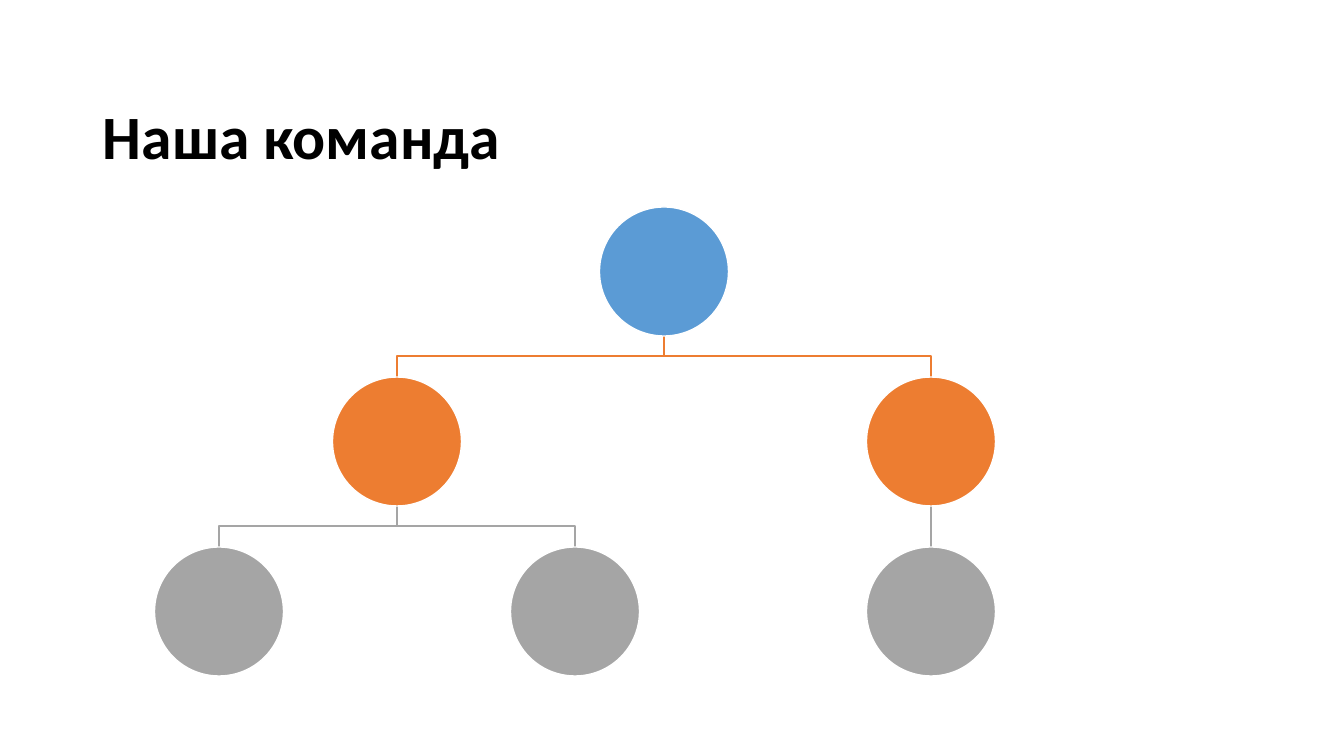
from lxml import etree
from pptx import Presentation
from pptx import util as u
from pptx.dml.color import RGBColor
from pptx.enum import shapes, text
from pptx.oxml.ns import qn

SCALE = u.Inches(1) / 100.8
COLOURS = {
    "title": "000000",
    "outline": "FFFFFF",
    "leader": "5B9BD5",
    "manager": "ED7D31",
    "member": "A5A5A5",
}
DIAMETER = 129
FIRST_TOP = 207
ROW_STEP = 170
LEVELS = ["leader", "manager", "member"]
TEAM = (664, [(397, [(219, []), (575, [])]), (931, [(931, [])])])


def px(length):
    return u.Emu(round(length * SCALE))


def colour(name):
    return RGBColor.from_string(COLOURS[name])


def apply(target, values):
    for name, value in values.items():
        setattr(target, name, value)


def style_line(line, name):
    line.color.rgb = colour(name)
    line.width = u.Pt(1)


def add_title(page, words):
    box = page.shapes.add_textbox(px(93), px(92), px(1159), px(95))
    frame = box.text_frame
    apply(frame, {"word_wrap": True, "vertical_anchor": text.MSO_ANCHOR.MIDDLE})
    para = frame.paragraphs[0]
    para.line_spacing = 0.9
    span = para.add_run()
    span.text = words
    apply(span.font, {"name": "Calibri", "size": u.Pt(44), "bold": True})
    span.font.color.rgb = colour("title")


def add_branch(page, parent_x, child_x, level):
    end = FIRST_TOP + level * ROW_STEP
    start = end - ROW_STEP + DIAMETER
    if parent_x == child_x:
        branch = page.shapes.add_connector(
            shapes.MSO_CONNECTOR.STRAIGHT,
            px(parent_x), px(start), px(child_x), px(end))
        etree.SubElement(branch._element.spPr, qn("a:effectLst"))
    else:
        middle = (start + end) / 2
        builder = page.shapes.build_freeform(parent_x, start, scale=SCALE)
        builder.add_line_segments(
            [(parent_x, middle), (child_x, middle), (child_x, end)], close=False)
        branch = builder.convert_to_shape()
        branch.fill.background()
        branch.shadow.inherit = False
    style_line(branch.line, LEVELS[level])


def add_person(page, centre, level):
    circle = page.shapes.add_shape(
        shapes.MSO_SHAPE.OVAL, px(centre - DIAMETER / 2),
        px(FIRST_TOP + level * ROW_STEP), px(DIAMETER), px(DIAMETER))
    circle.fill.solid()
    circle.fill.fore_color.rgb = colour(LEVELS[level])
    circle.shadow.inherit = False
    style_line(circle.line, "outline")


def add_team(page, member, level=0):
    centre, reports = member
    for report in reports:
        add_branch(page, centre, report[0], level + 1)
    add_person(page, centre, level)
    for report in reports:
        add_team(page, report, level + 1)


def main():
    deck = Presentation()
    apply(deck, {"slide_width": px(1344), "slide_height": px(756)})
    page = deck.slides.add_slide(deck.slide_layouts[6])
    add_title(page, "Наша команда")
    add_team(page, TEAM)
    deck.save("out.pptx")


if __name__ == "__main__":
    main()
